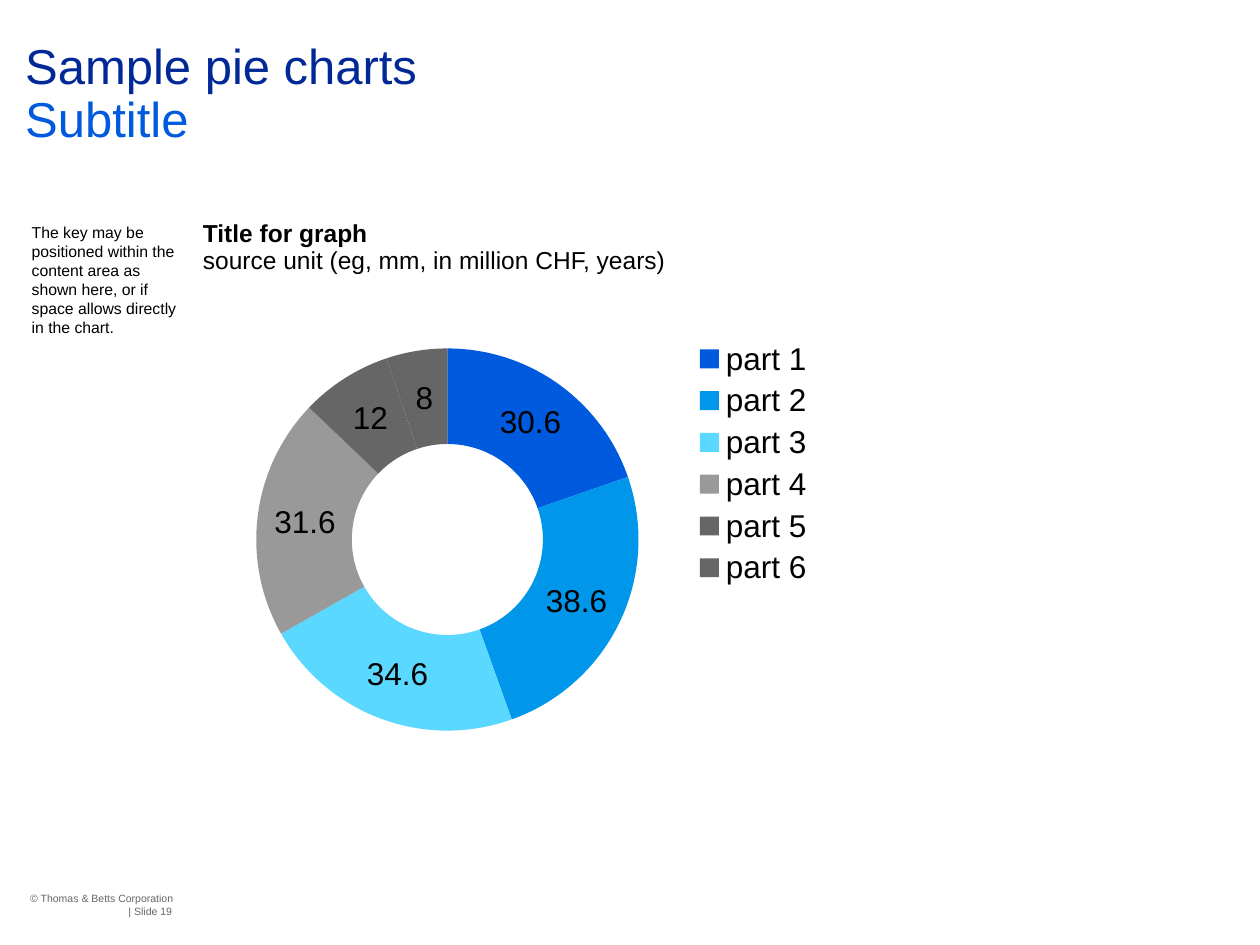
from lxml import etree
from pptx import Presentation
from pptx.chart.data import CategoryChartData
from pptx.dml.color import RGBColor
from pptx.enum.chart import XL_CHART_TYPE, XL_LEGEND_POSITION
from pptx.enum.text import MSO_ANCHOR
from pptx.oxml.ns import qn
from pptx.util import Cm, Pt

RING = XL_CHART_TYPE.DOUGHNUT
RIGHT = XL_LEGEND_POSITION.RIGHT
TOP, MID = MSO_ANCHOR.TOP, MSO_ANCHOR.MIDDLE

THEME = {
    "font": "Arial",
    "navy": "002897", "blue": "005ADE", "sky": "0096EA", "ice": "5BD8FF",
    "mist": "999999", "gray": "666666", "black": "000000",
    "head": 28, "key": 18, "graph": 14, "note": 9, "foot": 6,
}

PARTS = [
    ("part 1", 30.6, "blue"),
    ("part 2", 38.6, "sky"),
    ("part 3", 34.6, "ice"),
    ("part 4", 31.6, "mist"),
    ("part 5", 12, "gray"),
    ("part 6", 8, "gray"),
]
RING_BOX = (3.71, 6.63, 22.4, 12.07)
PLOT = {"layoutTarget": "inner", "xMode": "edge", "yMode": "edge",
        "x": 0.065, "y": 0.019, "w": 0.344, "h": 0.666}
KEY = {"xMode": "edge", "yMode": "edge", "x": 0.455, "y": 0.01}

BREAK = "\n"
TEXTS = [
    {"box": (0.61, 17.98, 3.1, 0.25), "size": "foot", "wrap": False,
     "lines": [[("© Thomas & Betts Corporation", "gray", False)]]},
    {"box": (2.59, 18.24, 1.35, 0.25), "size": "foot", "anchor": MID,
     "lines": [[("| Slide 19", "gray", False)]]},
    {"box": (0, 0, 25.4, 4.42), "size": "head", "space": 0.9,
     "pad": (0.51, 0.86, 0.61, 0),
     "lines": [[("Sample pie charts", "navy", False), BREAK,
                ("Subtitle", "blue", False)]]},
    {"box": (4.09, 4.42, 20.7, 0.94), "size": "graph", "space": 0.9,
     "pad": (0, 0.05, 0, 0),
     "lines": [[("Title for graph", "black", True)],
               [("source unit (eg, mm, in million CHF, years)", "black", False)]]},
    {"box": (0.64, 4.39, 3.07, 11.53), "size": "note", "pad": (0, 0.1, 0, 0),
     "lines": [[("The key may be positioned within the content area as shown here, "
                 "or if space allows directly in the chart.", "black", False)]]},
]


def tint(name):
    return RGBColor.from_string(THEME[name])


def style(font, size, color, bold=False):
    font.name = THEME["font"]
    font.size = Pt(THEME[size])
    font.bold = bold
    font.color.rgb = tint(color)


def add_text(slide, item):
    frame = slide.shapes.add_textbox(*map(Cm, item["box"])).text_frame
    frame.word_wrap = item.get("wrap", True)
    frame.vertical_anchor = item.get("anchor", TOP)
    pad = map(Cm, item.get("pad", (0, 0, 0, 0)))
    (frame.margin_left, frame.margin_top,
     frame.margin_right, frame.margin_bottom) = pad
    for i, line in enumerate(item["lines"]):
        para = frame.add_paragraph() if i else frame.paragraphs[0]
        para.line_spacing = item.get("space")
        for part in line:
            if part == BREAK:
                para.add_line_break()
                continue
            text, color, bold = part
            run = para.add_run()
            run.text = text
            style(run.font, item["size"], color, bold)


def place(host, index, rules):
    for old in host.findall(qn("c:layout")):
        host.remove(old)
    layout = etree.Element(qn("c:layout"))
    manual = etree.SubElement(layout, qn("c:manualLayout"))
    for tag, value in rules.items():
        etree.SubElement(manual, qn("c:" + tag)).set("val", str(value))
    host.insert(index, layout)


def add_ring(slide):
    names, values, colors = zip(*PARTS)
    data = CategoryChartData()
    data.categories = names
    data.add_series("Series 1", values)
    chart = slide.shapes.add_chart(RING, *map(Cm, RING_BOX), data).chart
    style(chart.font, "key", "black")
    chart.has_title = False
    chart.has_legend = True
    chart.legend.position = RIGHT
    chart.legend.include_in_layout = False
    style(chart.legend.font, "key", "black")
    plot = chart.plots[0]
    plot.vary_by_categories = True
    plot.has_data_labels = True
    labels = plot.data_labels
    labels.show_value = True
    labels.show_percentage = False
    labels.number_format = "General"
    labels.number_format_is_linked = False
    style(labels.font, "key", "black")
    for i, color in enumerate(colors):
        form = plot.series[0].points[i].format
        form.fill.solid()
        form.fill.fore_color.rgb = tint(color)
        form.line.fill.background()
    root = chart.element
    root.find(".//" + qn("c:holeSize")).set("val", "20")
    place(root.find(".//" + qn("c:plotArea")), 0, PLOT)
    place(root.find(".//" + qn("c:legend")), 1, KEY)


def main():
    deck = Presentation()
    deck.slide_width, deck.slide_height = Cm(25.4), Cm(19.05)
    slide = deck.slides.add_slide(deck.slide_layouts[6])
    add_ring(slide)
    for item in TEXTS:
        add_text(slide, item)
    deck.save("out.pptx")


if __name__ == "__main__":
    main()
